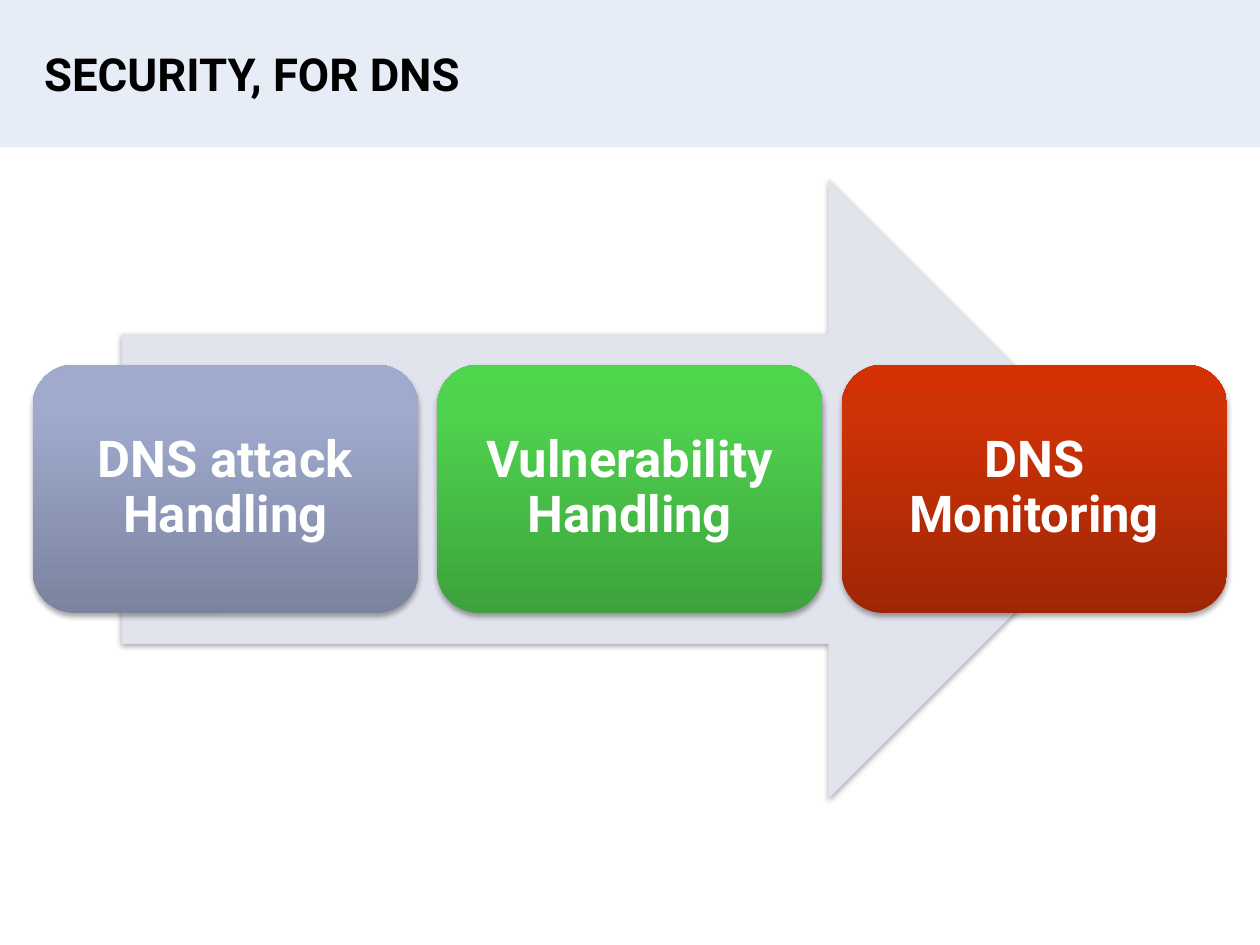
from lxml import etree
from pptx import Presentation
from pptx.dml.color import RGBColor
from pptx.enum import shapes, text
from pptx.oxml import parse_xml
from pptx.oxml.ns import nsdecls, qn
from pptx.util import Inches, Pt

COLORS = {"band": "E7EDF6", "title": "000000", "arrow": "E2E4ED", "label": "FFFFFF", "shadow": "000000"}
STEPS = [
    ("DNS attack Handling", ("7B839E", "9FAACD", "9FAACF")),
    ("Vulnerability Handling", ("3DA23C", "4FD24E", "4DD64C")),
    ("DNS Monitoring", ("9F2605", "CE3207", "D33003")),
]
STOPS = (0, 80000, 100000)


def rgb(name):
    """Return the named colour."""
    return RGBColor.from_string(COLORS[name])


def add_shape(s, kind, box):
    """Add a preset shape with neither outline nor shadow."""
    sp = s.shapes.add_shape(kind, *box)
    sp.shadow.inherit = False
    sp.line.fill.background()
    return sp


def fill_solid(sp, name):
    """Fill a shape with the named colour."""
    sp.fill.solid()
    sp.fill.fore_color.rgb = rgb(name)


def fill_gradient(sp, colors):
    """Fill a shape with a gradient running from bottom to top."""
    sp.fill.gradient()
    sp.fill.gradient_angle = 90
    stops = sp._element.spPr.find(".//" + qn("a:gsLst"))
    stops.clear()
    for pos, color in zip(STOPS, colors):
        gs = etree.SubElement(stops, qn("a:gs"), pos=str(pos))
        etree.SubElement(gs, qn("a:srgbClr"), val=color)


def add_shadow(sp):
    """Give a shape a soft shadow just below it."""
    sp._element.spPr.find(qn("a:effectLst")).append(parse_xml(
        f'<a:outerShdw {nsdecls("a")} blurRad="{Pt(3.1)}" dist="{Pt(1.8)}" dir="5400000" rotWithShape="0">'
        f'<a:srgbClr val="{COLORS["shadow"]}"><a:alpha val="35000"/></a:srgbClr></a:outerShdw>'))


def set_text(sp, content, size, color, align):
    """Write one bold, vertically centred paragraph in a shape."""
    tf = sp.text_frame
    tf.text = content
    tf.word_wrap = True
    tf.vertical_anchor = text.MSO_ANCHOR.MIDDLE
    p = tf.paragraphs[0]
    p.alignment = align
    p.font.name, p.font.size, p.font.bold = "Roboto", Pt(size), True
    p.font.color.rgb = rgb(color)
    return tf


def add_header(s, left, top, width, height):
    """Place the title on a tinted band."""
    band = add_shape(s, shapes.MSO_SHAPE.RECTANGLE, (left, top, width, height))
    fill_solid(band, "band")
    s.shapes._spTree.insert(2, band._element)
    title = s.shapes.title
    title.left, title.top = left + Inches(0.25), top
    title.width, title.height = Inches(8), height
    set_text(title, "SECURITY, FOR DNS", 26, "title", text.PP_ALIGN.LEFT)


def add_process(s, left, top, width, height):
    """Place a wide arrow with a row of evenly spaced steps over it."""
    arrow_width = Inches(8.07)
    arrow = add_shape(s, shapes.MSO_SHAPE.RIGHT_ARROW,
                      (left + (width - arrow_width) // 2, top, arrow_width, height))
    fill_solid(arrow, "arrow")
    add_shadow(arrow)

    step_width, step_height = Inches(3.06), Inches(1.97)
    pitch = (width - step_width) // (len(STEPS) - 1)
    for i, (label, colors) in enumerate(STEPS):
        step = add_shape(s, shapes.MSO_SHAPE.ROUNDED_RECTANGLE,
                         (left + i * pitch, top + (height - step_height) // 2, step_width, step_height))
        fill_gradient(step, colors)
        add_shadow(step)
        tf = set_text(step, label, 29, "label", text.PP_ALIGN.CENTER)
        tf.margin_left = tf.margin_right = tf.margin_top = tf.margin_bottom = Inches(0.12)
        tf.paragraphs[0].line_spacing = 0.9


def main():
    """Build and save the slide."""
    prs = Presentation()
    prs.slide_width, prs.slide_height = Inches(10), Inches(7.5)
    s = prs.slides.add_slide(prs.slide_layouts[5])
    add_header(s, 0, 0, prs.slide_width, Inches(1.17))
    add_process(s, Inches(0.26), Inches(1.42), Inches(9.48), Inches(4.92))
    prs.save("out.pptx")


if __name__ == "__main__":
    main()
